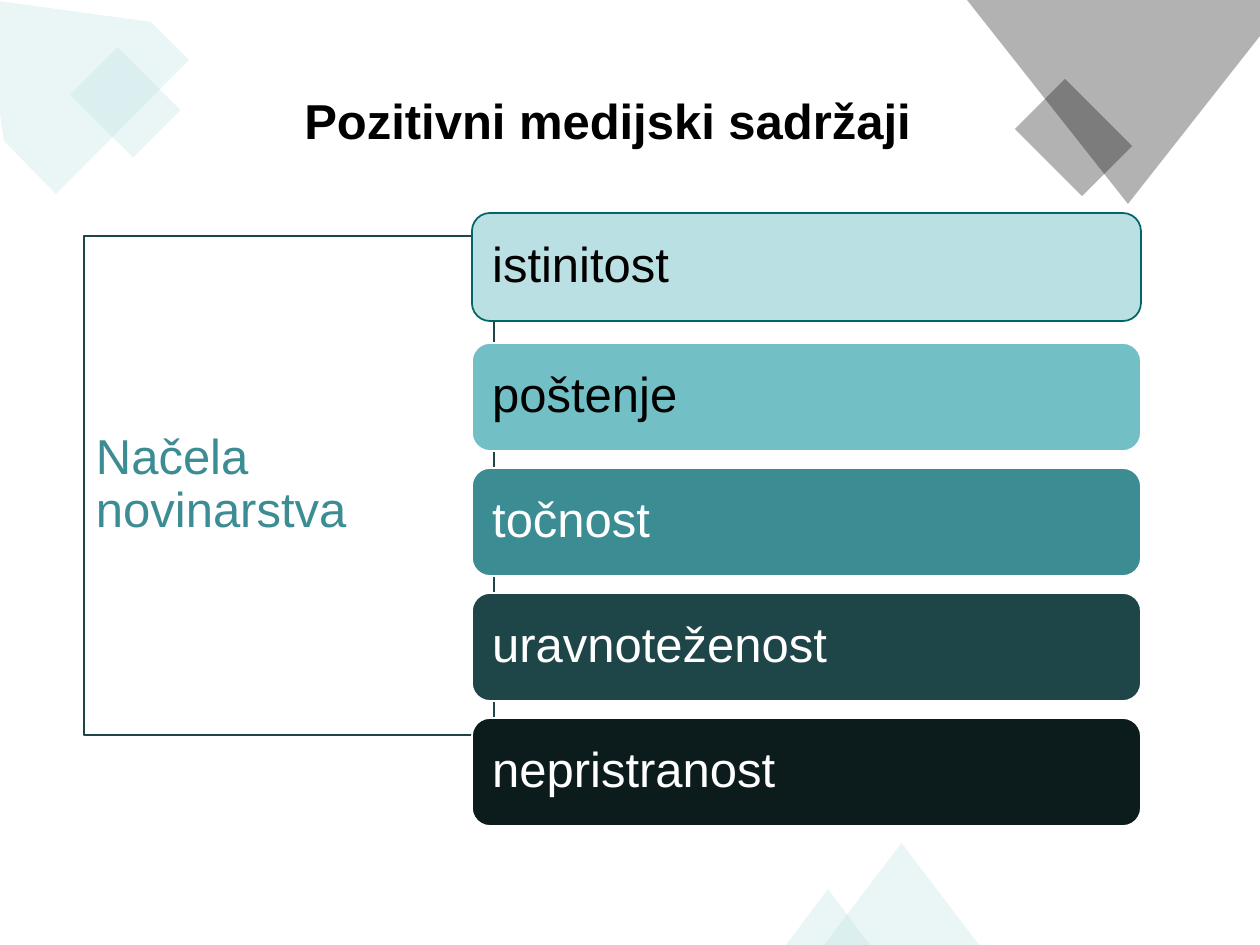
from dataclasses import dataclass

from lxml.etree import SubElement
from pptx import Presentation
from pptx.dml.color import RGBColor
from pptx.enum.shapes import MSO_SHAPE as Shape
from pptx.enum.text import MSO_ANCHOR as Anchor, PP_ALIGN as Align
from pptx.oxml.ns import qn
from pptx.slide import Slide
from pptx.util import Emu, Pt

BLACK = RGBColor(0x00, 0x00, 0x00)
WHITE = RGBColor(0xFF, 0xFF, 0xFF)
PALE = RGBColor(0xBB, 0xE0, 0xE3)
AQUA = RGBColor(0x72, 0xBF, 0xC5)
TEAL = RGBColor(0x3C, 0x8C, 0x93)
DEEP = RGBColor(0x1E, 0x46, 0x49)
NIGHT = RGBColor(0x0C, 0x1C, 0x1D)
EDGE = RGBColor(0x00, 0x66, 0x66)

PRINCIPLES = [
    ("istinitost", 213, PALE, EDGE, BLACK),
    ("poštenje", 343, AQUA, WHITE, BLACK),
    ("točnost", 468, TEAL, WHITE, WHITE),
    ("uravnoteženost", 593, DEEP, WHITE, WHITE),
    ("nepristranost", 718, NIGHT, WHITE, WHITE),
]


def px(length):
    return Emu(round(length * 914400 / 126))


@dataclass
class Painter:
    """Draws the elements of one page in a shared style."""

    page: Slide
    font: str = "Arial"
    size: int = 28
    opacity: int = 30

    def tint(self, shape, color):
        shape.shadow.inherit = False
        shape.line.fill.background()
        shape.fill.solid()
        shape.fill.fore_color.rgb = color
        tone = shape.element.spPr.find(qn("a:solidFill"))[0]
        SubElement(tone, qn("a:alpha"), val=str(self.opacity * 1000))

    def ornament(self, kind, left, top, width, height, color, rotation=0):
        shape = self.page.shapes.add_shape(kind, px(left), px(top), px(width), px(height))
        shape.rotation = rotation
        self.tint(shape, color)

    def polygon(self, points, color):
        start, *rest = [(px(x), px(y)) for x, y in points]
        builder = self.page.shapes.build_freeform(*start)
        builder.add_line_segments(rest, close=True)
        self.tint(builder.convert_to_shape(), color)

    def label(self, box, text, color, bold=False, spacing=None):
        para = box.text_frame.paragraphs[0]
        para.text = text
        para.alignment = Align.LEFT
        para.line_spacing = spacing
        font = para.font
        font.name, font.size, font.bold = self.font, Pt(self.size), bold
        font.color.rgb = color

    def panel(self, kind, left, top, width, height, text, color, fill, line, weight, inset):
        box = self.page.shapes.add_shape(kind, px(left), px(top), px(width), px(height))
        box.shadow.inherit = False
        if fill is None:
            box.fill.background()
        else:
            box.fill.solid()
            box.fill.fore_color.rgb = fill
        box.line.color.rgb = line
        box.line.width = Pt(weight)
        frame = box.text_frame
        frame.word_wrap = True
        frame.vertical_anchor = Anchor.MIDDLE
        frame.margin_left = frame.margin_right = px(inset)
        self.label(box, text, color, spacing=0.9)

    def heading(self, left, top, width, height, text):
        box = self.page.shapes.add_textbox(px(left), px(top), px(width), px(height))
        box.text_frame.word_wrap = False
        self.label(box, text, BLACK, bold=True)


def main():
    deck = Presentation()
    deck.slide_width, deck.slide_height = px(1260), px(945)
    painter = Painter(deck.slides.add_slide(deck.slide_layouts[6]))

    painter.polygon([(151, 22), (-16, -1), (4, 141), (56, 194), (189, 60)], PALE)
    painter.ornament(Shape.RECTANGLE, 92, 58, 67, 89, PALE, 315)
    painter.ornament(Shape.RECTANGLE, 1038, 90, 71, 95, BLACK, 315)
    painter.polygon([(1260, 0), (967, 0), (1128, 204), (1260, 36)], BLACK)
    painter.ornament(Shape.ISOSCELES_TRIANGLE, 824, 843, 155, 102, PALE)
    painter.ornament(Shape.ISOSCELES_TRIANGLE, 786, 889, 84, 56, PALE)

    painter.panel(Shape.RECTANGLE, 84, 236, 410, 499, "Načela novinarstva",
                  TEAL, None, DEEP, 0.75, 12)
    for text, top, fill, line, color in PRINCIPLES:
        painter.panel(Shape.ROUNDED_RECTANGLE, 472, top, 669, 108, text,
                      color, fill, line, 1, 15)
    painter.heading(292, 84, 635, 72, "Pozitivni medijski sadržaji")

    deck.save("out.pptx")


if __name__ == "__main__":
    main()
